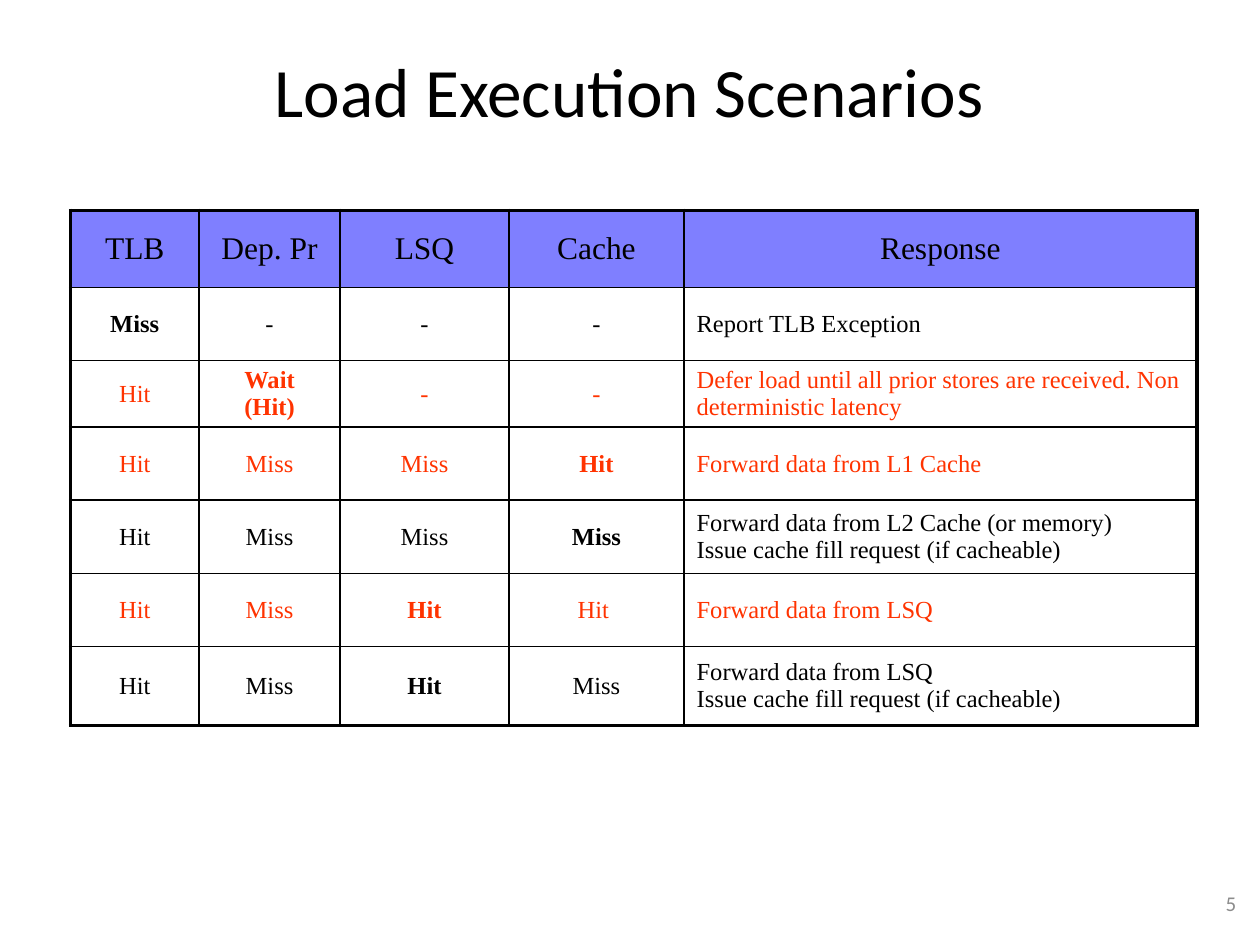
from lxml import etree
from pptx import Presentation
from pptx import util as u
from pptx.dml.color import RGBColor
from pptx.enum import text
from pptx.oxml.ns import qn

COLORS = {"black": "000000", "red": "FF3300", "header": "0000FF", "gray": "8C8C8C"}
TITLE = "Load Execution Scenarios"
PAGE_NUMBER = "5"
HEADERS = ["TLB", "Dep. Pr", "LSQ", "Cache", "Response"]

# Each scenario: text color, column of the deciding (bold) cell, cell texts
SCENARIOS = [
    ("black", 0, ["Miss", "-", "-", "-", "Report TLB Exception"]),
    ("red", 1, ["Hit", "Wait\n(Hit)", "-", "-",
                "Defer load until all prior stores are received. Non deterministic latency"]),
    ("red", 3, ["Hit", "Miss", "Miss", "Hit", "Forward data from L1 Cache"]),
    ("black", 3, ["Hit", "Miss", "Miss", "Miss",
                  "Forward data from L2 Cache (or memory)\nIssue cache fill request (if cacheable)"]),
    ("red", 2, ["Hit", "Miss", "Hit", "Hit ", "Forward data from LSQ"]),
    ("black", 2, ["Hit", "Miss", "Hit", "Miss",
                  "Forward data from LSQ\nIssue cache fill request (if cacheable)"]),
]
COLUMN_WIDTHS = [1.02, 1.12, 1.34, 1.39, 4.07]
ROW_HEIGHTS = [0.61, 0.58, 0.47, 0.58, 0.58, 0.58, 0.63]
INNER_LINE, OUTER_LINE = 1, 2.25


def write(frame, content, align, color, **font_format):
    """Fill a text frame, one paragraph per line, with one format."""
    frame.text = content
    frame.word_wrap = True
    for paragraph in frame.paragraphs:
        paragraph.alignment = align
        font = paragraph.runs[0].font
        font.color.rgb = RGBColor.from_string(COLORS[color])
        for name, value in font_format.items():
            setattr(font, name, value)


def place(shape, left, top, width, height):
    box = dict(left=left, top=top, width=width, height=height)
    for name, value in box.items():
        setattr(shape, name, u.Inches(value))


def add_borders(cell, widths):
    properties = cell._tc.get_or_add_tcPr()
    for side, width in widths.items():
        line = etree.SubElement(properties, qn(f"a:ln{side}"), w=str(u.Pt(width)))
        fill = etree.SubElement(line, qn("a:solidFill"))
        etree.SubElement(fill, qn("a:srgbClr"), val=COLORS["black"])


def fill_header(cell):
    cell.fill.solid()
    cell.fill.fore_color.rgb = RGBColor.from_string(COLORS["header"])
    color = cell._tc.tcPr.find(qn("a:solidFill")).find(qn("a:srgbClr"))
    etree.SubElement(color, qn("a:alpha"), val="50000")


def add_scenario_table(slide):
    rows = [("black", None, HEADERS)] + SCENARIOS
    last_row, last_column = len(rows) - 1, len(HEADERS) - 1
    table = slide.shapes.add_table(
        len(rows), len(HEADERS), u.Inches(0.56), u.Inches(1.67),
        u.Inches(sum(COLUMN_WIDTHS)), u.Inches(sum(ROW_HEIGHTS))).table
    table.first_row = table.horz_banding = False
    for column, width in zip(table.columns, COLUMN_WIDTHS):
        column.width = u.Inches(width)
    for row, height in zip(table.rows, ROW_HEIGHTS):
        row.height = u.Inches(height)

    for i, (color, bold_column, contents) in enumerate(rows):
        for j, content in enumerate(contents):
            cell = table.cell(i, j)
            is_header = i == 0
            centered = is_header or j < last_column
            write(cell.text_frame, content,
                  text.PP_ALIGN.CENTER if centered else text.PP_ALIGN.LEFT, color,
                  name="Times New Roman", size=u.Pt(18 if is_header else 14),
                  bold=j == bold_column)
            cell.vertical_anchor = text.MSO_ANCHOR.MIDDLE
            # Heavy frame around the table, thin grid inside
            on_edge = {"L": j == 0, "R": j == last_column, "T": i == 0, "B": i == last_row}
            add_borders(cell, {side: OUTER_LINE if edge else INNER_LINE
                               for side, edge in on_edge.items()})
            if is_header:
                fill_header(cell)
            else:
                cell.fill.background()


def main():
    presentation = Presentation()
    presentation.slide_width, presentation.slide_height = u.Inches(10), u.Inches(7.5)
    slide = presentation.slides.add_slide(presentation.slide_layouts[5])

    # Title
    title = slide.shapes.title
    place(title, 0.33, 0.42, 9.33, 0.58)
    write(title.text_frame, TITLE, text.PP_ALIGN.CENTER, "black",
          name="Calibri", size=u.Pt(39.6))
    title.text_frame.vertical_anchor = text.MSO_ANCHOR.MIDDLE
    title.text_frame.auto_size = text.MSO_AUTO_SIZE.NONE

    # Scenarios
    add_scenario_table(slide)

    # Page number
    number = slide.shapes.add_textbox(0, 0, 0, 0)
    place(number, 7.83, 6.92, 2.08, 0.5)
    write(number.text_frame, PAGE_NUMBER, text.PP_ALIGN.RIGHT, "gray",
          name="Calibri", size=u.Pt(12))
    number.text_frame.vertical_anchor = text.MSO_ANCHOR.MIDDLE

    presentation.save("out.pptx")


if __name__ == "__main__":
    main()
